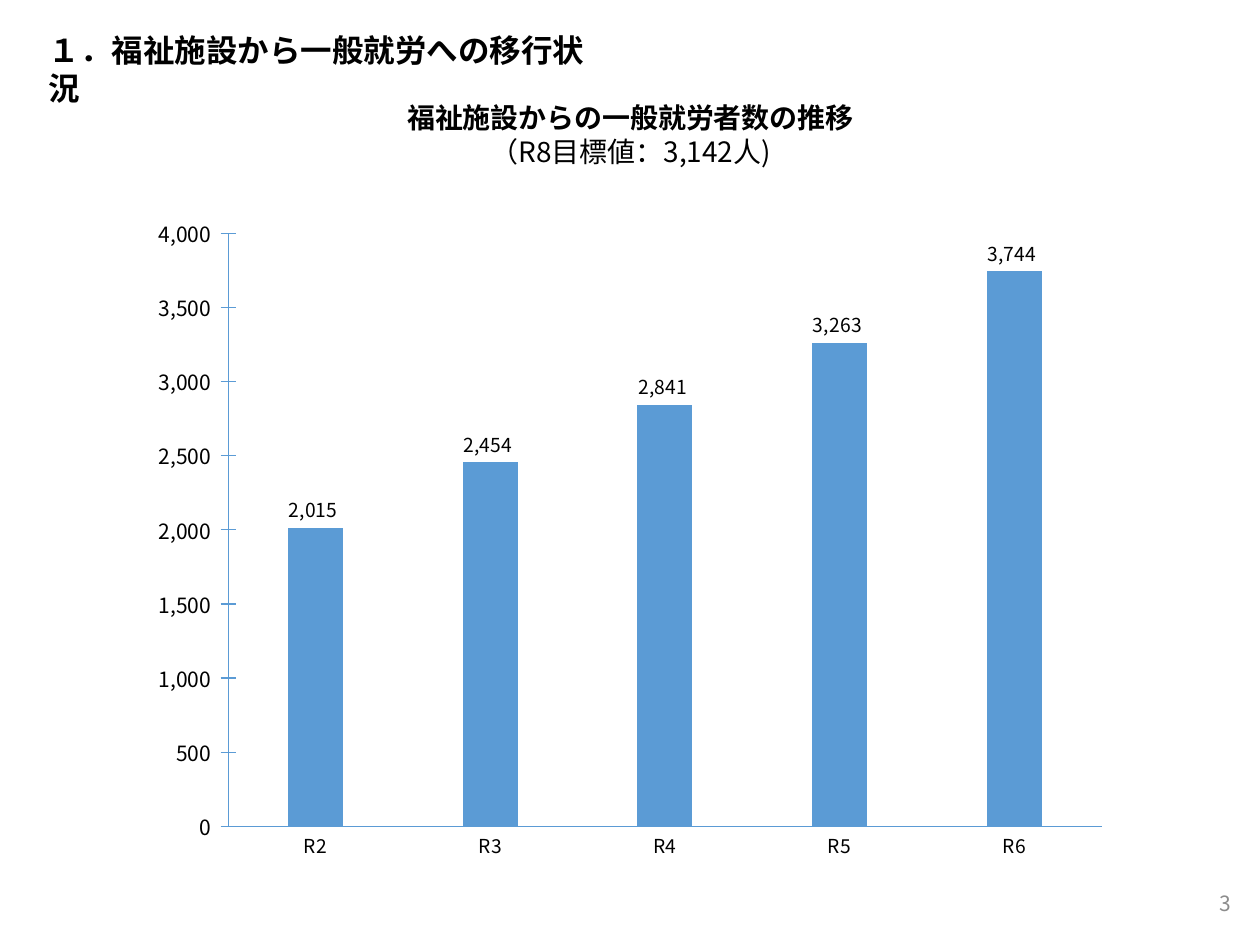
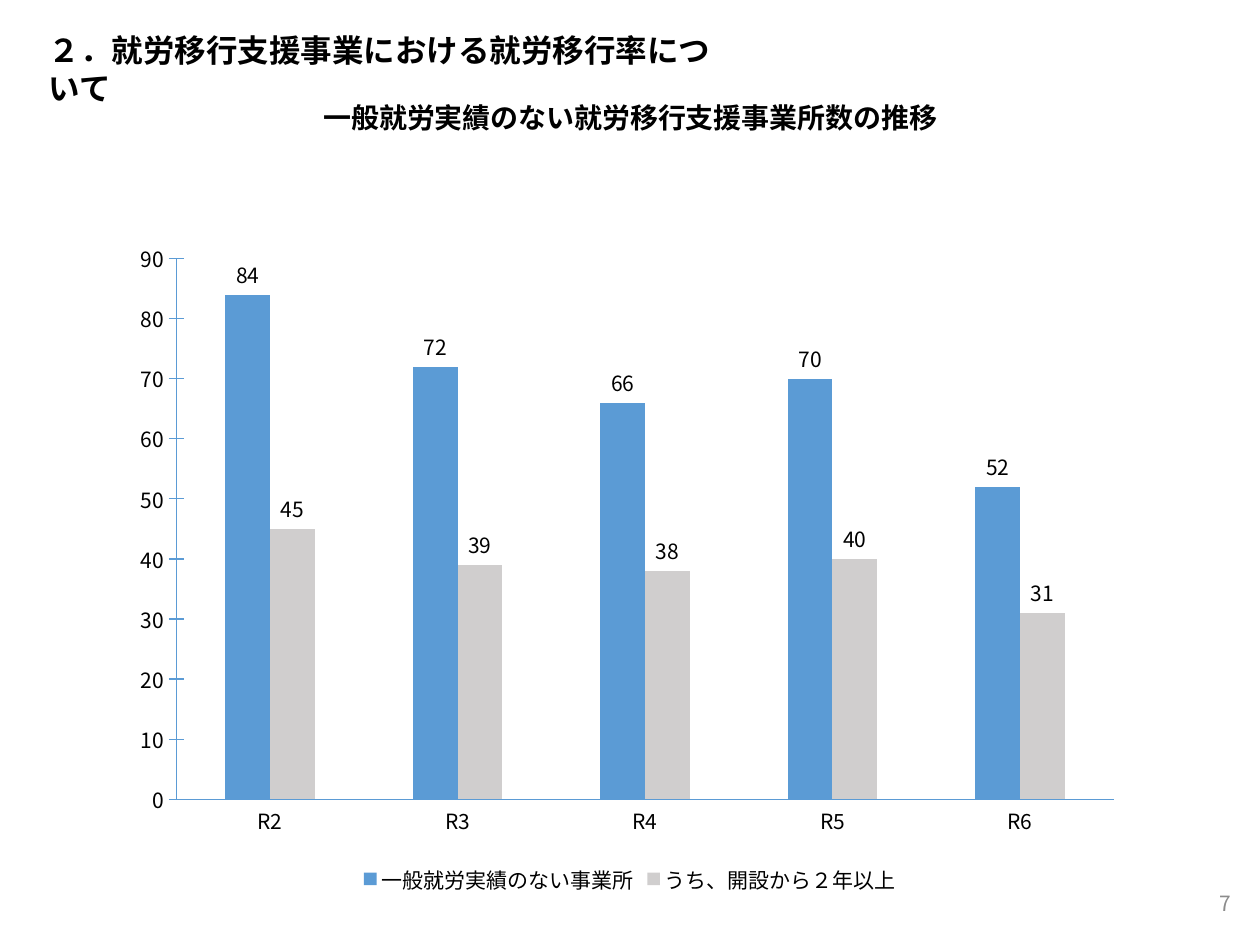
from dataclasses import dataclass
from typing import NamedTuple

from lxml.etree import Element, SubElement
from pptx import Presentation
from pptx.chart.data import CategoryChartData
from pptx.dml.color import RGBColor
from pptx.enum.chart import XL_CHART_TYPE, XL_LABEL_POSITION, XL_LEGEND_POSITION, XL_TICK_MARK
from pptx.enum.text import MSO_ANCHOR, MSO_AUTO_SIZE, PP_ALIGN
from pptx.oxml.ns import qn
from pptx.util import Inches, Pt

# Shared style: a grid of 100 columns by 75 rows
WIDTH, HEIGHT = Inches(10), Inches(7.5)
COLUMNS, ROWS = 100, 75
FONT = "Noto Sans CJK JP"
BLACK, GREY, BLUE, SILVER = "000000", "8C8C8C", "5B9BD5", "D0CECE"
YEARS = ["R2", "R3", "R4", "R5", "R6"]
THOUSANDS = r"#,##0_);[Red]\(#,##0\)"


class Frame(NamedTuple):
    col: float
    row: float
    cols: float
    rows: float

    def emu(self) -> list[int]:
        cell_w, cell_h = WIDTH / COLUMNS, HEIGHT / ROWS
        return [round(n) for n in (self.col * cell_w, self.row * cell_h,
                                   self.cols * cell_w, self.rows * cell_h)]


class Line(NamedTuple):
    text: str
    bold: bool = False


class Series(NamedTuple):
    name: str
    values: list[int]
    color: str


@dataclass
class BarChart:
    frame: Frame
    plot: Frame  # shares of the chart's own size
    series: list[Series]
    top: int
    step: int
    overlap: int = 0
    number_format: str = "General"
    small_size: int = 12  # category and data labels


@dataclass
class ChartSlide:
    title: str
    title_cols: float
    heading: list[Line]
    heading_rows: float
    chart: BarChart
    page: str


def rgb(color: str) -> RGBColor:
    return RGBColor.from_string(color)


def style_font(font, size: float, color: str = BLACK, bold: bool = False) -> None:
    font.name, font.size, font.bold = FONT, Pt(size), bold
    font.color.rgb = rgb(color)


def set_east_asian_font(root) -> None:
    """Repeat each Latin typeface for Japanese characters."""
    for latin in list(root.iter(qn("a:latin"))):
        latin.addnext(Element(qn("a:ea"), typeface=FONT))


def add_text(s, frame: Frame, lines: list[Line], size: float, color: str = BLACK,
             align=PP_ALIGN.LEFT, anchor=MSO_ANCHOR.TOP, fit=MSO_AUTO_SIZE.SHAPE_TO_FIT_TEXT) -> None:
    tf = s.shapes.add_textbox(*frame.emu()).text_frame
    tf.word_wrap, tf.auto_size, tf.vertical_anchor = True, fit, anchor
    for i, line in enumerate(lines):
        p = tf.add_paragraph() if i else tf.paragraphs[0]
        p.alignment = align
        r = p.add_run()
        r.text = line.text
        style_font(r.font, size, color, line.bold)


def place_plot(chart, plot: Frame) -> None:
    """Fix the inner plot area inside the chart."""
    area = chart._chartSpace.chart.plotArea
    for old in area.findall(qn("c:layout")):
        area.remove(old)
    layout = Element(qn("c:layout"))
    area.insert(0, layout)
    manual = SubElement(layout, qn("c:manualLayout"))
    settings = {"layoutTarget": "inner", "xMode": "edge", "yMode": "edge",
                **dict(zip("xywh", plot))}
    for tag, value in settings.items():
        SubElement(manual, qn(f"c:{tag}"), val=str(value))


def style_axis(axis, size: float, tick) -> None:
    axis.has_major_gridlines = False
    axis.major_tick_mark, axis.minor_tick_mark = tick, XL_TICK_MARK.NONE
    axis.format.line.color.rgb = rgb(BLUE)
    axis.format.line.width = Pt(0.75)
    style_font(axis.tick_labels.font, size)


def add_bar_chart(s, spec: BarChart) -> None:
    data = CategoryChartData(number_format=spec.number_format)
    data.categories = YEARS
    for series in spec.series:
        data.add_series(series.name, series.values)
    chart = s.shapes.add_chart(XL_CHART_TYPE.COLUMN_CLUSTERED, *spec.frame.emu(), data).chart
    chart.has_title = False
    style_font(chart.font, spec.small_size)
    place_plot(chart, spec.plot)

    # Axes
    style_axis(chart.category_axis, spec.small_size, XL_TICK_MARK.NONE)
    axis = chart.value_axis
    style_axis(axis, 12, XL_TICK_MARK.CROSS)
    axis.minimum_scale, axis.maximum_scale, axis.major_unit = 0, spec.top, spec.step
    axis.tick_labels.number_format = spec.number_format
    axis.tick_labels.number_format_is_linked = False

    # Bars and their values
    plot = chart.plots[0]
    plot.gap_width, plot.overlap, plot.vary_by_categories = 219, spec.overlap, False
    for bars, series in zip(plot.series, spec.series):
        bars.format.fill.solid()
        bars.format.fill.fore_color.rgb = rgb(series.color)
        labels = bars.data_labels
        labels.show_value, labels.position = True, XL_LABEL_POSITION.OUTSIDE_END
        labels.number_format, labels.number_format_is_linked = spec.number_format, False
        style_font(labels.font, spec.small_size)

    # Legend
    chart.has_legend = len(spec.series) > 1
    if chart.has_legend:
        chart.legend.position = XL_LEGEND_POSITION.BOTTOM
        chart.legend.include_in_layout = False
        style_font(chart.legend.font, 12)
    set_east_asian_font(chart._chartSpace)


def add_chart_slide(prs, content: ChartSlide) -> None:
    s = prs.slides.add_slide(prs.slide_layouts[6])
    add_bar_chart(s, content.chart)
    add_text(s, Frame(2.9, 2, content.title_cols, 4), [Line(content.title, True)], 18)
    add_text(s, Frame(24, 7.5, 52.1, content.heading_rows), content.heading, 16,
             align=PP_ALIGN.CENTER)
    add_text(s, Frame(76.2, 69.7, 22.5, 4), [Line(content.page)], 12, GREY,
             PP_ALIGN.RIGHT, MSO_ANCHOR.MIDDLE, MSO_AUTO_SIZE.NONE)
    set_east_asian_font(s.shapes._spTree)


SLIDES = [
    ChartSlide(
        "１．福祉施設から一般就労への移行状況", 45.8,
        [Line("福祉施設からの一般就労者数の推移", True), Line("（R8目標値：3,142人)")], 6.4,
        BarChart(Frame(11.1, 16.4, 77.9, 52.9), Frame(0.09, 0.04, 0.89, 0.89),
                 [Series("Series 1", [2015, 2454, 2841, 3263, 3744], BLUE)],
                 top=4000, step=500, overlap=-27, number_format=THOUSANDS, small_size=11),
        "3"),
    ChartSlide(
        "２．就労移行支援事業における就労移行率について", 56.6,
        [Line("一般就労実績のない就労移行支援事業所数の推移", True)], 3.7,
        BarChart(Frame(10, 18.4, 80, 53), Frame(0.05, 0.04, 0.93, 0.81),
                 [Series("一般就労実績のない事業所", [84, 72, 66, 70, 52], BLUE),
                  Series("うち、開設から２年以上", [45, 39, 38, 40, 31], SILVER)],
                 top=90, step=10),
        "7"),
]


def main() -> None:
    prs = Presentation()
    prs.slide_width, prs.slide_height = WIDTH, HEIGHT
    for content in SLIDES:
        add_chart_slide(prs, content)
    prs.save("out.pptx")


if __name__ == "__main__":
    main()
